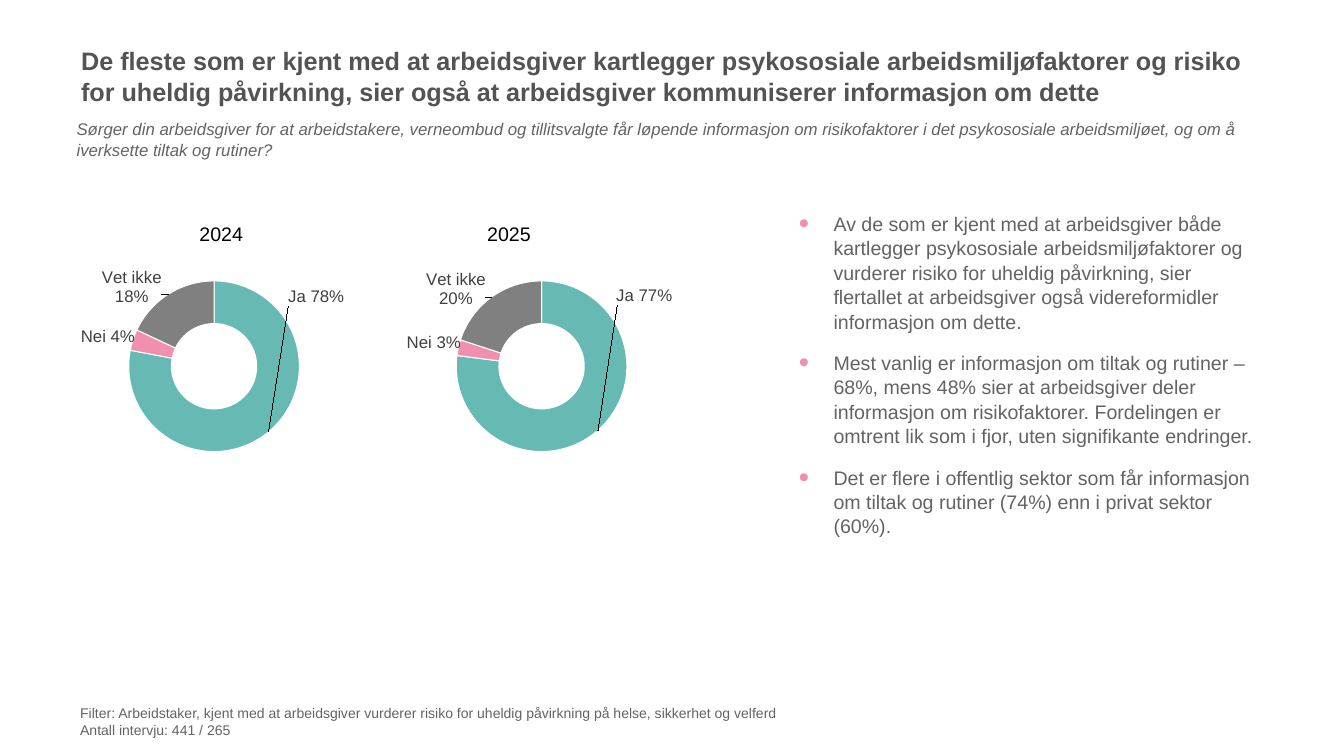
from pptx import Presentation
from pptx.chart.data import CategoryChartData
from pptx.dml.color import RGBColor
from pptx.enum.chart import XL_CHART_TYPE as CT
from pptx.enum.text import MSO_ANCHOR as ANCHOR, PP_ALIGN as ALIGN
from pptx.oxml import parse_xml
from pptx.oxml.ns import nsdecls, qn
from pptx.util import Inches, Pt

WIDTH, HEIGHT = Inches(26.67), Inches(15)
HEADING = RGBColor(0x53, 0x53, 0x53)
BODY = RGBColor(0x62, 0x63, 0x62)
LABEL = RGBColor(0x40, 0x40, 0x40)
BLACK = RGBColor(0, 0, 0)
WHITE = RGBColor(255, 255, 255)
TEAL = RGBColor(0x66, 0xBA, 0xB3)
PINK = RGBColor(0xF1, 0x90, 0xAE)
GREY = RGBColor(0x80, 0x80, 0x80)

ANSWERS = [
    ("Ja", TEAL, (0.23, -0.61), " "),
    ("Nei", PINK, (-0.17, -0.05), " "),
    ("Vet ikke", GREY, (-0.18, -0.13), "\n"),
]
YEARS = [
    ("2024", 5.81, 12.82, (0.78, 0.04, 0.18)),
    ("2025", 30.18, 34.23, (0.77, 0.03, 0.2)),
]
TITLE = (
    "De fleste som er kjent med at arbeidsgiver kartlegger psykososiale "
    "arbeidsmiljøfaktorer og risiko for uheldig påvirkning, sier også at "
    "arbeidsgiver kommuniserer informasjon om dette"
)
QUESTION = (
    "Sørger din arbeidsgiver for at arbeidstakere, verneombud og tillitsvalgte "
    "får løpende informasjon om risikofaktorer i det psykososiale arbeidsmiljøet, "
    "og om å iverksette tiltak og rutiner?"
)
FINDINGS = [
    "Av de som er kjent med at arbeidsgiver både kartlegger psykososiale "
    "arbeidsmiljøfaktorer og vurderer risiko for uheldig påvirkning, sier "
    "flertallet at arbeidsgiver også videreformidler informasjon om dette.",
    "Mest vanlig er informasjon om tiltak og rutiner – 68%, mens 48% sier at "
    "arbeidsgiver deler informasjon om risikofaktorer. Fordelingen er omtrent "
    "lik som i fjor, uten signifikante endringer.",
    "Det er flere i offentlig sektor som får informasjon om tiltak og rutiner "
    "(74%) enn i privat sektor (60%).",
]
FILTER = [
    "Filter: Arbeidstaker, kjent med at arbeidsgiver vurderer risiko for "
    "uheldig påvirkning på helse, sikkerhet og velferd",
    "Antall intervju: 441 / 265",
]


class SlideBuilder:
    """Draws styled elements on a slide divided into 100 columns and 100 rows."""

    font = "Arial"
    inset = Inches(0.06)
    indent = Inches(0.69)
    leading = 1.04

    def __init__(self, slide):
        self.s = slide

    def area(self, x, y, w, h):
        col, row = WIDTH / 100, HEIGHT / 100
        return int(x * col), int(y * row), int(w * col), int(h * row)

    def style(self, font, size, color):
        font.name, font.size = self.font, Pt(size)
        font.color.rgb = color

    def text(self, box, lines, size, color=BODY, bold=False, italic=False,
             align=ALIGN.LEFT, anchor=ANCHOR.TOP, bullets=False):
        tf = self.s.shapes.add_textbox(*self.area(*box)).text_frame
        tf.word_wrap, tf.vertical_anchor = True, anchor
        tf.margin_left = tf.margin_right = self.inset
        tf.margin_top = tf.margin_bottom = self.inset
        for i, line in enumerate(lines):
            p = tf.add_paragraph() if i else tf.paragraphs[0]
            p.text, p.alignment = line, align
            p.line_spacing = self.leading
            if bullets:
                p.space_before, p.space_after = Pt(18 if i else 0), Pt(6)
                self.bullet(p)
            self.style(p.font, size, color)
            p.font.bold, p.font.italic = bold, italic

    def bullet(self, p):
        pr = p._p.get_or_add_pPr()
        pr.set("marL", str(self.indent))
        pr.set("indent", str(-self.indent))
        ns = nsdecls("a")
        for xml in (
            f'<a:buClr {ns}><a:srgbClr val="{PINK}"/></a:buClr>',
            f'<a:buSzPct {ns} val="150000"/>',
            f'<a:buFont {ns} typeface="{self.font}"/>',
            f'<a:buChar {ns} char="•"/>',
        ):
            pr.append(parse_xml(xml))

    def layout(self, inner=False, **shares):
        target = '<c:layoutTarget val="inner"/>' if inner else ""
        modes = '<c:xMode val="edge"/><c:yMode val="edge"/>' if inner else ""
        values = "".join(f'<c:{k} val="{v}"/>' for k, v in shares.items())
        return parse_xml(f'<c:layout {nsdecls("c")}><c:manualLayout>{target}{modes}'
                         f'{values}</c:manualLayout></c:layout>')

    def doughnut(self, box, values):
        data = CategoryChartData(number_format="0%")
        data.categories = [name for name, *_ in ANSWERS]
        data.add_series("Series 1", values)
        chart = self.s.shapes.add_chart(CT.DOUGHNUT, *self.area(*box), data).chart
        chart.has_legend = chart.has_title = False
        self.style(chart.font, 10, BLACK)
        area = chart._chartSpace.chart.plotArea
        for old in area.findall(qn("c:layout")):
            area.remove(old)
        area.insert(0, self.layout(True, x=0.19, y=0.11, w=0.64, h=0.88))
        plot = chart.plots[0]
        plot.vary_by_categories = True
        next(area.iter(qn("c:holeSize"))).set("val", "60")
        for i, (_, color, offset, separator) in enumerate(ANSWERS):
            point = plot.series[0].points[i]
            point.format.fill.solid()
            point.format.fill.fore_color.rgb = color
            point.format.line.color.rgb = WHITE
            point.format.line.width = Pt(1.5)
            self.label(point, offset, separator)

    def label(self, point, offset, separator):
        self.style(point.data_label.font, 24, LABEL)
        lbl = point.data_label._get_or_add_dLbl()
        ns = nsdecls("c")
        lbl.insert(1, self.layout(x=offset[0], y=offset[1]))
        lbl.insert(2, parse_xml(f'<c:numFmt {ns} formatCode="0%" sourceLinked="0"/>'))
        lbl.find(qn("c:showCatName")).set("val", "1")
        lbl.append(parse_xml(f"<c:separator {ns}>{separator}</c:separator>"))


def main():
    prs = Presentation()
    prs.slide_width, prs.slide_height = WIDTH, HEIGHT
    sb = SlideBuilder(prs.slides.add_slide(prs.slide_layouts[6]))
    sb.text((5.81, 5.87, 89.13, 8.13), [TITLE], 36, HEADING, bold=True,
            anchor=ANCHOR.MIDDLE)
    sb.text((5.47, 15.2, 89.43, 5.33), [QUESTION], 24, italic=True)
    for year, chart_x, year_x, values in YEARS:
        sb.doughnut((chart_x, 34.33, 19.84, 25.67), values)
        sb.text((year_x, 28.93, 7.27, 3.87), [year], 28, BLACK,
                align=ALIGN.CENTER, anchor=ANCHOR.MIDDLE)
    sb.text((59.21, 27.47, 35.06, 63.33), FINDINGS, 28, bullets=True)
    sb.text((5.74, 92.67, 87.59, 5.33), FILTER, 20)
    prs.save("out.pptx")


if __name__ == "__main__":
    main()
